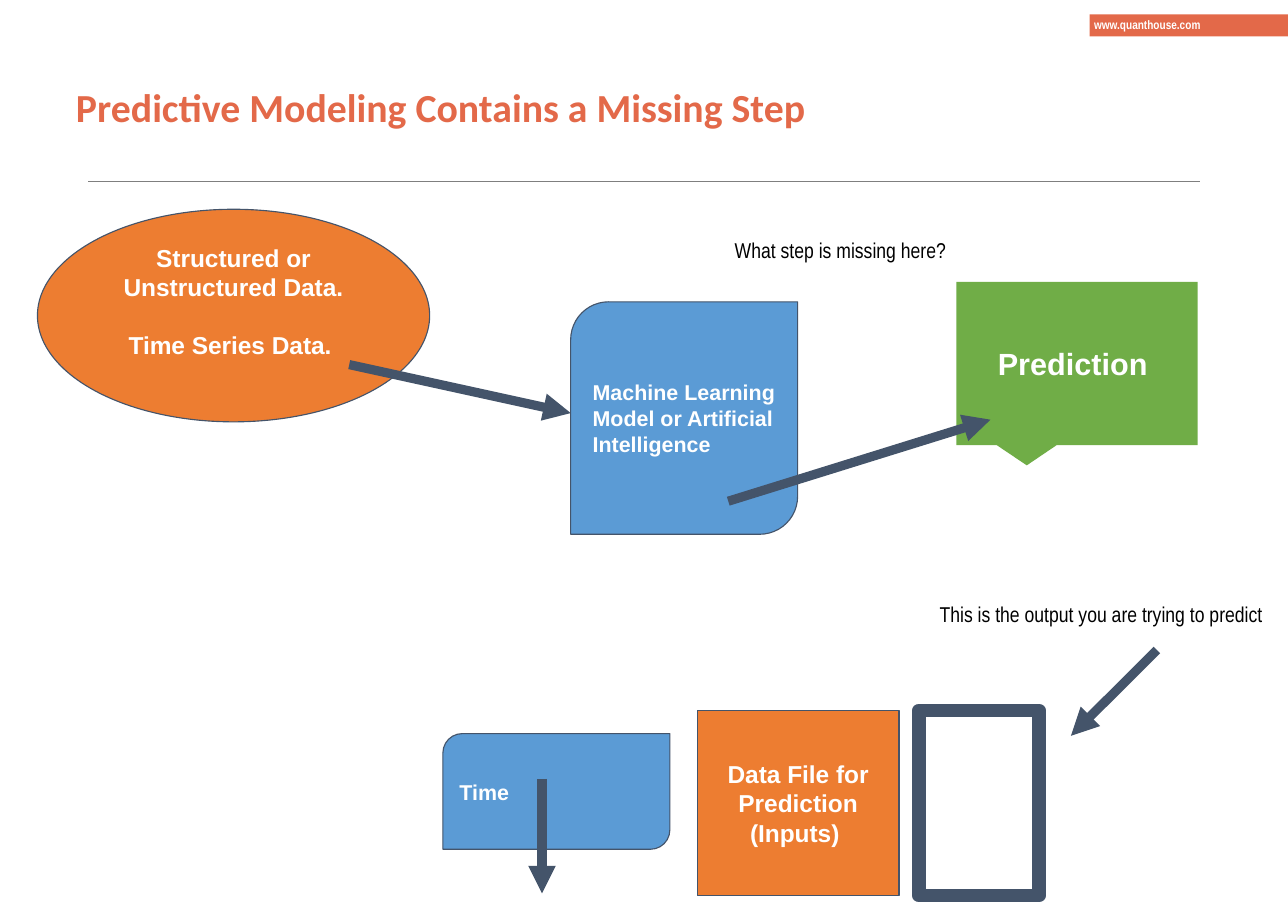
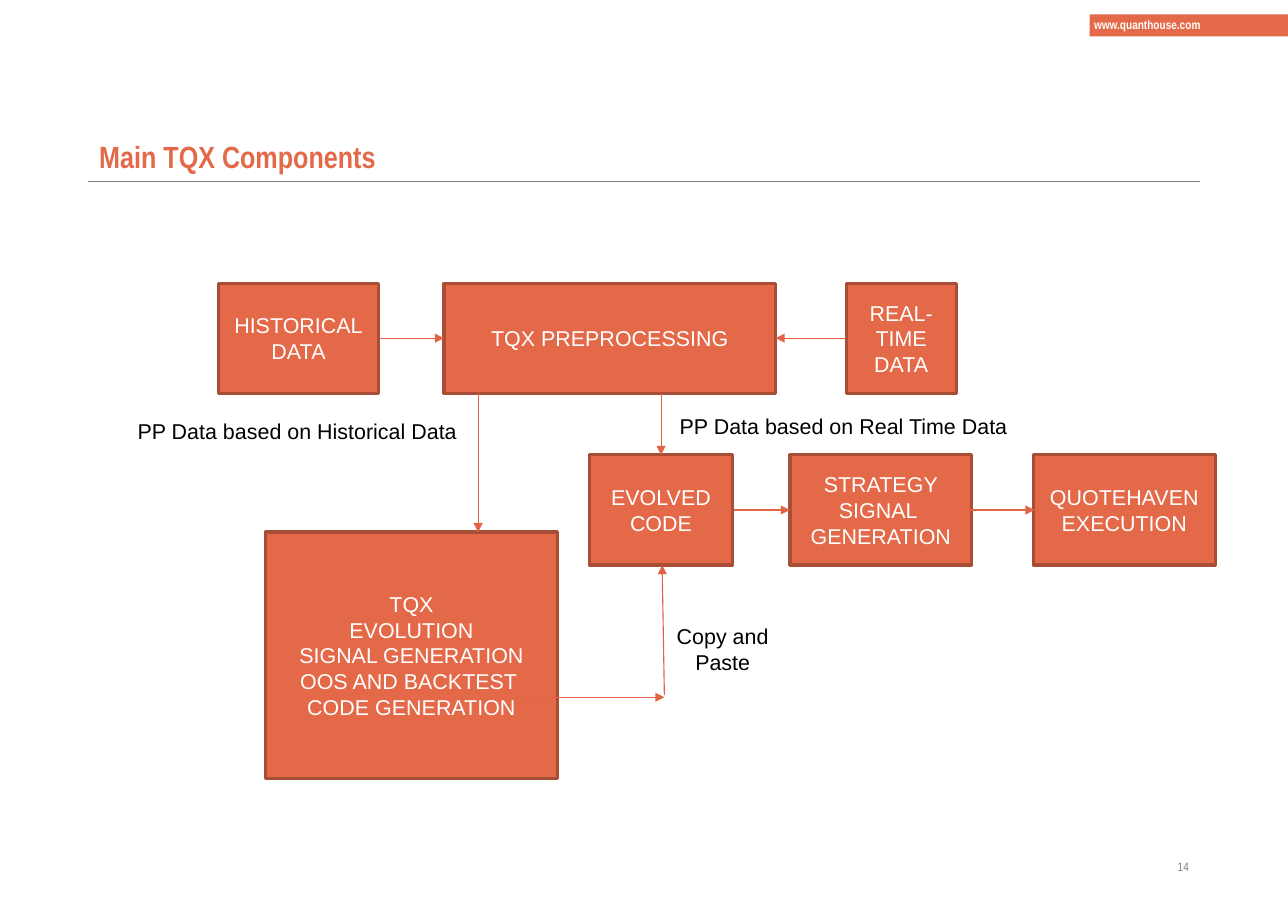
import pptx
import pptx.dml.color
import pptx.enum.shapes
import pptx.enum.text
import pptx.oxml
import pptx.oxml.ns
import pptx.util

Inches, Pt = pptx.util.Inches, pptx.util.Pt
SHAPE = pptx.enum.shapes.MSO_SHAPE
ALIGN = pptx.enum.text.PP_ALIGN
ANCHOR = pptx.enum.text.MSO_ANCHOR

# Shared colours and fonts
CORAL, RUST, FLAME = "E36949", "A84E36", "E26444"
ORANGE, BLUE, GREEN, SLATE = "ED7D31", "5B9BD5", "70AD47", "44546A"
WHITE, BLACK, GRAY = "FFFFFF", "000000", "7F7F7F"
SANS, NARROW = "Arial", "Arial Narrow"


def rgb(value):
    return pptx.dml.color.RGBColor.from_string(value)


def write(sp, text, color, font, anchor=ANCHOR.TOP, align=ALIGN.LEFT,
          margins=(0.1, 0.05, 0.1, 0.05), wrap=True, gap=0, spacing=1.0):
    """Fill a shape with text, one paragraph per line, gap points apart."""
    tf = sp.text_frame
    frame = {"auto_size": pptx.enum.text.MSO_AUTO_SIZE.NONE,
             "word_wrap": wrap, "vertical_anchor": anchor}
    for side, margin in zip(("left", "top", "right", "bottom"), margins):
        frame["margin_" + side] = Inches(margin)
    for name, value in frame.items():
        setattr(tf, name, value)
    for i, line in enumerate(text.split("\n")):
        p = tf.add_paragraph() if i else tf.paragraphs[0]
        p.alignment, p.line_spacing = align, spacing
        p.space_before = Pt(gap if i else 0)
        r = p.add_run()
        r.text = line
        for name, value in font.items():
            setattr(r.font, name, value)
        r.font.color.rgb = rgb(color)


prs = pptx.Presentation()
prs.slide_width, prs.slide_height = Inches(11.69), Inches(8.27)
layout = prs.slide_layouts[5]

# Text styles
bold = {"name": SANS, "size": Pt(14), "bold": True}
plain = {"name": SANS, "size": Pt(14), "bold": False}
note = {"name": NARROW, "size": Pt(14), "bold": False}
even = (0.1,) * 4
row1, row2 = 2.57, 4.13

# Contents: boxes are (shape, adjustments, place, fill, text, options)
missing_step = {
    "title": ("Predictive Modeling Contains a Missing Step",
              (0.58, 0.33, 11.79, 1.33),
              {"name": "Calibri", "size": Pt(26), "bold": True},
              {"anchor": ANCHOR.MIDDLE, "margins": (0.11, 0.06, 0.11, 0.06)}),
    "font": bold,
    "outline": (SLATE, 0.75),
    "boxes": [
        (SHAPE.OVAL, (), (0.34, 1.9, 3.56, 1.93), ORANGE,
         "Structured or Unstructured Data.\nTime Series Data. ",
         {"size": 16, "gap": 18.4, "margins": (0.1, 0.1, 0.1, 0.36)}),
        (SHAPE.ROUND_2_DIAG_RECTANGLE, (0.167, 0), (5.18, 2.74, 2.06, 2.11), BLUE,
         "Machine Learning Model or Artificial Intelligence",
         {"align": ALIGN.LEFT, "margins": even}),
        (SHAPE.RECTANGULAR_CALLOUT, (-0.208, 0.625), (8.68, 2.56, 2.19, 1.48), GREEN,
         "Prediction ", {"size": 20, "margins": even, "line": None}),
        (SHAPE.ROUND_2_DIAG_RECTANGLE, (0.167, 0), (4.02, 6.66, 2.06, 1.05), BLUE,
         "Time", {"align": ALIGN.LEFT, "margins": even}),
        (SHAPE.RECTANGLE, (), (6.33, 6.45, 1.83, 1.68), ORANGE,
         "Data File for Prediction (Inputs) ", {"size": 16, "margins": even}),
        (SHAPE.RECTANGLE, (), (8.34, 6.45, 1.09, 1.68), WHITE,
         "", {"line": (SLATE, 9)}),
    ],
    "arrow_line": (SLATE, 6),
    "arrows": [(6.61, 4.55, 8.99, 3.81), (4.92, 7.07, 4.92, 8.11),
               (10.5, 5.9, 9.72, 6.68), (3.17, 3.31, 5.18, 3.75)],
    "labels": [
        ("What step is missing here?", (6.57, 2.05, 3.15, 0.28),
         BLACK, note, {"margins": even}),
        ("This is the output you are trying to predict", (8.43, 5.36, 3.15, 0.28),
         BLACK, note, {"margins": even}),
    ],
}
components = {
    "title": ("Main TQX Components", (0.8, 0.44, 10.08, 1.2),
              {"name": NARROW, "size": Pt(20), "bold": True},
              {"anchor": ANCHOR.BOTTOM}),
    "font": plain,
    "outline": (RUST, 2),
    "boxes": [
        (SHAPE.RECTANGLE, (), place, CORAL, text, {}) for place, text in [
            ((1.98, row1, 1.46, 1), "HISTORICAL\nDATA"),
            ((4.03, row1, 3.01, 1), "TQX PREPROCESSING"),
            ((7.68, row1, 1, 1), "REAL- TIME\nDATA"),
            ((5.35, row2, 1.3, 1), "EVOLVED\nCODE"),
            ((7.17, row2, 1.65, 1), "STRATEGY\nSIGNAL \nGENERATION"),
            ((9.38, row2, 1.65, 1), "QUOTEHAVEN\nEXECUTION"),
            ((2.41, 4.83, 2.65, 2.24),
             "TQX\nEVOLUTION\nSIGNAL GENERATION\nOOS AND BACKTEST \nCODE GENERATION"),
        ]
    ],
    "arrow_line": (FLAME, 0.75),
    "arrows": [(3.44, 3.07, 4.03, 3.07), (7.68, 3.07, 7.04, 3.07),
               (6, 3.57, 6, 4.13), (4.34, 3.57, 4.34, 4.83),
               (6.66, 4.63, 7.17, 4.63), (8.76, 4.63, 9.39, 4.63),
               (4.71, 6.33, 6.03, 6.33), (6.03, 6.31, 6.01, 5.13)],
    "labels": [
        ("Copy and\nPaste", (6.01, 5.61, 1.1, 0.57), BLACK, plain,
         {"align": ALIGN.CENTER}),
        ("PP Data based on Historical Data", (1.15, 3.75, 3.12, 0.34),
         BLACK, plain, {"wrap": False}),
        ("PP Data based on Real Time Data", (6.07, 3.7, 3.21, 0.34),
         BLACK, plain, {"wrap": False}),
        ("14", (8.26, 7.75, 2.63, 0.31), GRAY, {"name": NARROW, "size": Pt(8)},
         {"align": ALIGN.RIGHT}),
    ],
}

for number, content in enumerate((missing_step, components)):
    s = prs.slides.add_slide(layout)

    # Title
    text, place, font, options = content["title"]
    sp = s.shapes.title
    sp.left, sp.top, sp.width, sp.height = map(Inches, place)
    write(sp, text, CORAL, font, spacing=0.9, **options)

    # Boxes
    for kind, adjustments, place, fill, text, options in content["boxes"]:
        options = {"anchor": ANCHOR.MIDDLE, "align": ALIGN.CENTER, **options}
        outline = options.pop("line", content["outline"])
        font = dict(content["font"])
        if "size" in options:
            font["size"] = Pt(options.pop("size"))
        sp = s.shapes.add_shape(kind, *map(Inches, place))
        sp.shadow.inherit = False
        for i, value in enumerate(adjustments):
            sp.adjustments[i] = value
        sp.fill.solid()
        sp.fill.fore_color.rgb = rgb(fill)
        if outline:
            sp.line.color.rgb, sp.line.width = rgb(outline[0]), Pt(outline[1])
        else:
            sp.line.fill.background()
        if text:
            write(sp, text, WHITE, font, **options)

    # Arrows, and on the first slide the rule that the layout will hold
    color, width = content["arrow_line"]
    lines = [(ends, color, width, True) for ends in content["arrows"]]
    if number == 0:
        lines.append(((0.8, 1.65, 10.89, 1.65), GRAY, 0.75, False))
    for ends, color, width, arrow in lines:
        sp = s.shapes.add_connector(pptx.enum.shapes.MSO_CONNECTOR.STRAIGHT,
                                    *map(Inches, ends))
        sp.line.color.rgb, sp.line.width = rgb(color), Pt(width)
        if arrow:
            tail = pptx.oxml.parse_xml(
                '<a:tailEnd %s type="triangle"/>' % pptx.oxml.ns.nsdecls("a"))
            sp.line._get_or_add_ln().append(tail)
        sp.element.spPr.append(pptx.oxml.parse_xml(
            "<a:effectLst %s/>" % pptx.oxml.ns.nsdecls("a")))
        if not arrow:
            layout.shapes.element.append(sp.element)

    # Labels
    for text, place, color, font, options in content["labels"]:
        write(s.shapes.add_textbox(*map(Inches, place)), text, color, font, **options)

# Web address band, kept on the layout
sp = s.shapes.add_shape(SHAPE.RECTANGLE, *map(Inches, (9.89, 0.13, 1.8, 0.2)))
sp.shadow.inherit = False
sp.fill.solid()
sp.fill.fore_color.rgb = rgb(CORAL)
sp.line.fill.background()
write(sp, "www.quanthouse.com", WHITE, {"name": NARROW, "size": Pt(8), "bold": True},
      anchor=ANCHOR.MIDDLE, margins=(0.04,) * 4, spacing=0.9)
layout.shapes.element.append(sp.element)

prs.save("out.pptx")
